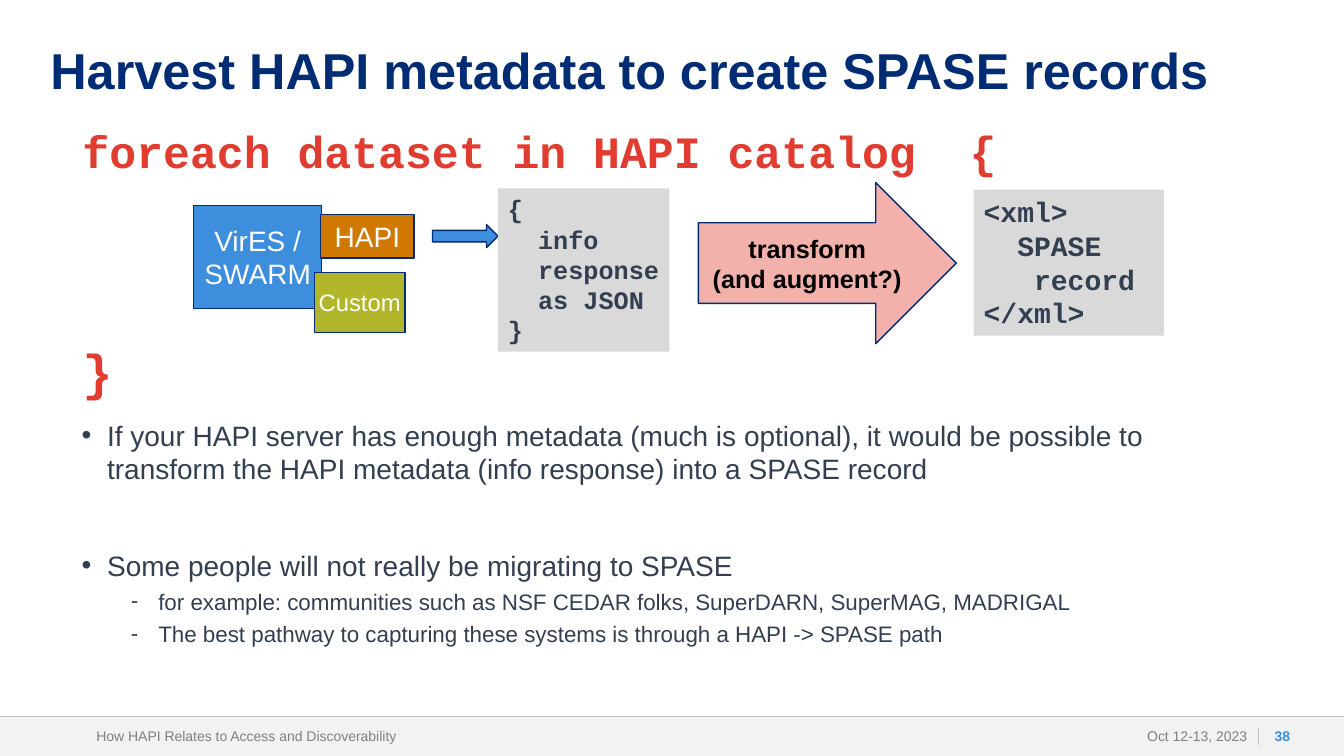
from lxml.etree import SubElement
from pptx import Presentation
from pptx.dml.color import RGBColor
from pptx.enum.shapes import MSO_CONNECTOR, MSO_SHAPE
from pptx.enum.text import MSO_ANCHOR, PP_ALIGN
from pptx.oxml.ns import qn
from pptx.util import Cm, Pt

COLORS = {
    "navy": "002C73", "slate": "333F50", "blue": "3E8EDE", "olive": "B1B62B",
    "orange": "D07900", "pink": "F3B1AC", "red": "E03C30", "black": "000000",
    "white": "FFFFFF", "code": "D9D9D9", "band": "F2F2F2", "rule": "BFBFBF",
    "footer": "808080",
}
SANS, MONO = "Arial", "Courier New"
RECT, ARROW = MSO_SHAPE.RECTANGLE, MSO_SHAPE.RIGHT_ARROW
LEFT, CENTER, RIGHT = PP_ALIGN.LEFT, PP_ALIGN.CENTER, PP_ALIGN.RIGHT
TOP, MIDDLE = MSO_ANCHOR.TOP, MSO_ANCHOR.MIDDLE
PADDED, SIDES, NO_INSET = (0.25, 0.13), (0.25, 0), (0, 0)

SLIDE_WIDTH, SLIDE_HEIGHT = 33.87, 19.05
FOOTER_TOP, FOOTER_HEIGHT = 18.06, 0.99

TITLE = "Harvest HAPI metadata to create SPASE records"
LOOP_START, LOOP_END = "foreach dataset in HAPI catalog  {", "}"

# text, level, space before in points
BULLETS = [
    ("If your HAPI server has enough metadata (much is optional), it would be "
     "possible to transform the HAPI metadata (info response) into a SPASE record", 0, 0),
    ("Some people will not really be migrating to SPASE", 0, 45),
    ("for example: communities such as NSF CEDAR folks, SuperDARN, SuperMAG, MADRIGAL", 1, 4),
    ("The best pathway to capturing these systems is through a HAPI -> SPASE path", 1, 4),
]
# character, size, left margin, hanging indent
LEVELS = [("•", 20, 0.64, 0.64), ("-", 16, 1.93, 0.69)]

# left, width, text, size, color, bold, alignment, insets
FOOTER = [
    (2.18, 8.89, "How HAPI Relates to Access and Discoverability", "footer", False, LEFT, SIDES),
    (23.55, 8.13, "Oct 12-13, 2023", "footer", False, RIGHT, SIDES),
    (31.78, 1.07, "38", "blue", True, CENTER, NO_INSET),
]

# shape, left, top, width, height, fill, lines, size, text color, bold, insets
FLOW = [
    (RECT, 4.88, 5.18, 3.23, 2.59, "blue", ["VirES / SWARM"], 20, "white", False, PADDED),
    (RECT, 7.92, 6.86, 2.29, 1.52, "olive", ["Custom"], 17, "white", False, (0, 0.13)),
    (RECT, 8.08, 5.41, 2.36, 1.09, "orange", ["HAPI"], 20, "white", False, PADDED),
    (ARROW, 10.9, 5.66, 1.65, 0.58, "blue", [], 18, "white", False, PADDED),
    (ARROW, 17.6, 4.6, 6.5, 4.06, "pink", ["transform", "(and augment?)"],
     18, "black", True, PADDED),
]

# left, top, width, height, size, lines
CODE = [
    (12.55, 4.75, 4.32, 4.11, 18, ["{", "  info", "  response", "  as JSON", "}"]),
    (24.54, 4.78, 4.8, 3.68, 20, ["<xml>", "  SPASE", "   record", "</xml>"]),
]


def rgb(name):
    return RGBColor.from_string(COLORS[name])


def set_frame(shape, insets, anchor=TOP, wrap=True):
    frame = shape.text_frame
    frame.word_wrap = wrap
    frame.vertical_anchor = anchor
    frame.margin_left = frame.margin_right = Cm(insets[0])
    frame.margin_top = frame.margin_bottom = Cm(insets[1])
    return frame


def add_para(frame, text, size, color, bold=False, align=LEFT, font=SANS):
    """Fill the empty first paragraph, or append one, and return it."""
    first = frame.paragraphs[0]
    para = frame.add_paragraph() if first.runs else first
    para.alignment = align
    span = para.add_run()
    span.text = text
    span.font.name = font
    span.font.size = Pt(size)
    span.font.bold = bold
    span.font.color.rgb = rgb(color)
    return para


def add_text_box(slide, left, top, width, height, insets, anchor=TOP, wrap=True):
    box = slide.shapes.add_textbox(Cm(left), Cm(top), Cm(width), Cm(height))
    return set_frame(box, insets, anchor, wrap)


def add_block(slide, kind, left, top, width, height, fill, outline=None):
    block = slide.shapes.add_shape(kind, Cm(left), Cm(top), Cm(width), Cm(height))
    block.shadow.inherit = False
    block.fill.solid()
    block.fill.fore_color.rgb = rgb(fill)
    if outline:
        block.line.color.rgb = rgb(outline)
        block.line.width = Pt(1)
    else:
        block.line.fill.background()
    return block


def add_rule(slide, x1, y1, x2, y2):
    rule = slide.shapes.add_connector(MSO_CONNECTOR.STRAIGHT, Cm(x1), Cm(y1), Cm(x2), Cm(y2))
    rule.line.color.rgb = rgb("rule")
    rule.line.width = Pt(0.5)
    SubElement(rule._element.spPr, qn("a:effectLst"))


def add_bullet(para, character, margin, hanging):
    props = para._p.get_or_add_pPr()
    props.set("marL", str(Cm(margin)))
    props.set("indent", str(-Cm(hanging)))
    SubElement(props, qn("a:buFont")).set("typeface", SANS)
    SubElement(props, qn("a:buChar")).set("char", character)


def draw_footer(slide):
    add_block(slide, RECT, 0, FOOTER_TOP, SLIDE_WIDTH, FOOTER_HEIGHT, "band")
    add_rule(slide, 0, FOOTER_TOP, SLIDE_WIDTH, FOOTER_TOP)
    add_rule(slide, 31.72, 18.34, 31.72, 18.77)
    for left, width, text, color, bold, align, insets in FOOTER:
        frame = add_text_box(slide, left, FOOTER_TOP, width, FOOTER_HEIGHT, insets, MIDDLE)
        add_para(frame, text, 10, color, bold, align)


def draw_bullets(slide):
    frame = add_text_box(slide, 2.06, 10.54, 28.58, 7.26, NO_INSET)
    for text, level, space in BULLETS:
        character, size, margin, hanging = LEVELS[level]
        para = add_para(frame, text, size, "slate")
        para.level = level
        if space:
            para.space_before = Pt(space)
        add_bullet(para, character, margin, hanging)


def draw_flow(slide):
    for kind, left, top, width, height, fill, lines, size, color, bold, insets in FLOW:
        block = add_block(slide, kind, left, top, width, height, fill, "navy")
        frame = set_frame(block, insets, MIDDLE)
        for line in lines:
            add_para(frame, line, size, color, bold, CENTER)
    for left, top, width, height, size, lines in CODE:
        block = add_block(slide, RECT, left, top, width, height, "code")
        frame = set_frame(block, PADDED, wrap=False)
        for line in lines:
            add_para(frame, line, size, "slate", True, font=MONO)


def draw_loop(slide):
    frame = add_text_box(slide, 1.83, 3, 25.45, 7.09, PADDED)
    add_para(frame, LOOP_START, 32, "red", True, font=MONO)
    closing = add_para(frame, LOOP_END, 36, "red", True, font=MONO)
    closing.space_before = Pt(116)


def main():
    deck = Presentation()
    deck.slide_width, deck.slide_height = Cm(SLIDE_WIDTH), Cm(SLIDE_HEIGHT)
    page = deck.slides.add_slide(deck.slide_layouts[6])
    draw_footer(page)
    title = add_text_box(page, 1.27, 1.17, 31.32, 2.11, NO_INSET)
    add_para(title, TITLE, 36, "navy", True).line_spacing = 0.9
    draw_bullets(page)
    draw_flow(page)
    draw_loop(page)
    deck.save("out.pptx")


if __name__ == "__main__":
    main()
